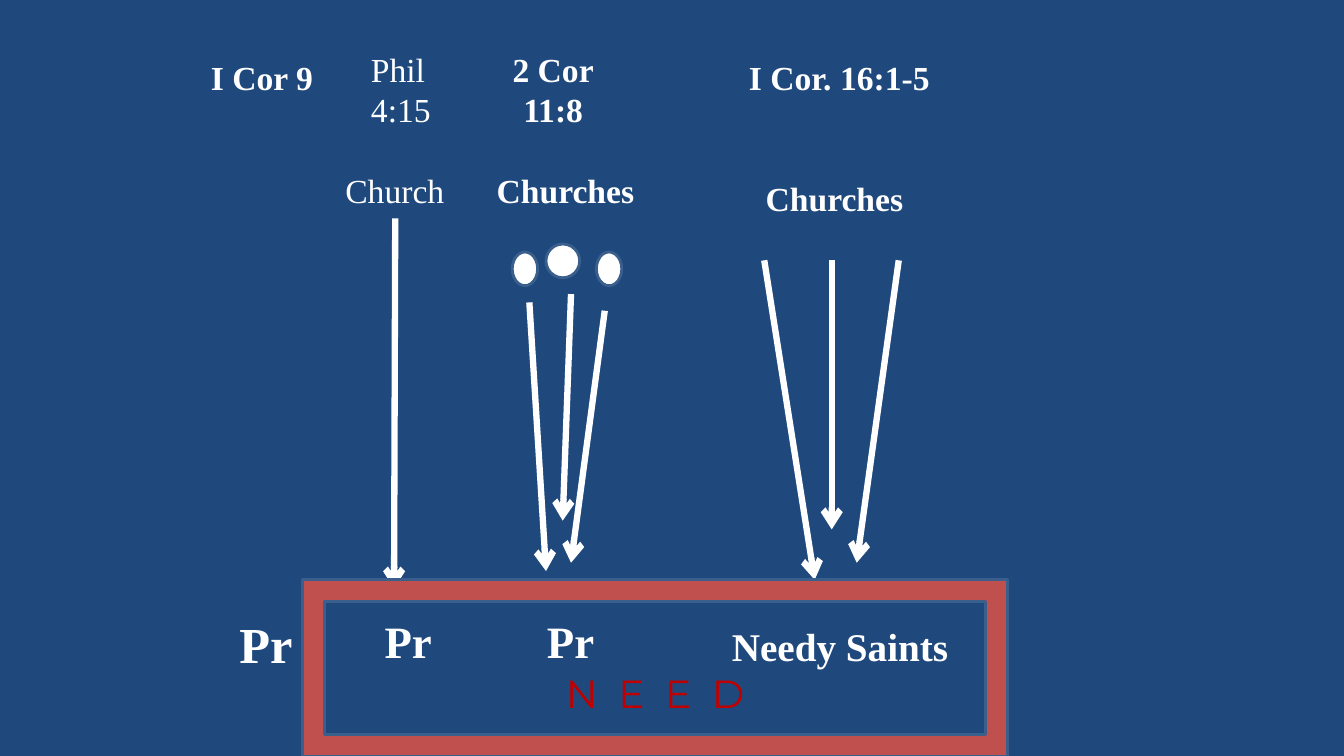
from lxml import etree
from pptx import Presentation
from pptx.dml.color import RGBColor
from pptx.enum.shapes import MSO_CONNECTOR, MSO_SHAPE
from pptx.enum.text import MSO_ANCHOR, PP_ALIGN
from pptx.oxml.ns import qn
from pptx.util import Cm, Pt

NAVY = RGBColor(0x1F, 0x49, 0x7D)
WHITE = RGBColor(0xFF, 0xFF, 0xFF)
EDGE = RGBColor(0x3A, 0x5F, 0x8C)
BRICK = RGBColor(0xC0, 0x50, 0x4D)
RED = RGBColor(0xC0, 0x00, 0x00)
LEFT, MID = PP_ALIGN.LEFT, PP_ALIGN.CENTER
OVAL, FRAME = MSO_SHAPE.OVAL, MSO_SHAPE.FRAME
STRAIGHT = MSO_CONNECTOR.STRAIGHT
MIDDLE = MSO_ANCHOR.MIDDLE

deck = Presentation()
deck.slide_width, deck.slide_height = Cm(33.87), Cm(19.05)
slide = deck.slides.add_slide(deck.slide_layouts[6])
slide.background.fill.solid()
slide.background.fill.fore_color.rgb = NAVY
shapes = slide.shapes


def label(text, x, y, size=24, bold=True, wide=4, align=MID):
    """Write text in a box centred on x, y."""
    high = 1.4 * (text.count("\n") + 1)
    box = shapes.add_textbox(Cm(x - wide / 2), Cm(y - high / 2), Cm(wide), Cm(high))
    frame = box.text_frame
    frame.word_wrap = True
    frame.vertical_anchor = MIDDLE
    frame.margin_left = frame.margin_right = 0
    frame.margin_top = frame.margin_bottom = 0
    frame.text = text
    for para in frame.paragraphs:
        para.alignment = align
        para.font.name = "Times New Roman"
        para.font.size = Pt(size)
        para.font.bold = bold
        para.font.color.rgb = WHITE


def shape(kind, x, y, wide, high, fill):
    item = shapes.add_shape(kind, Cm(x), Cm(y), Cm(wide), Cm(high))
    item.shadow.inherit = False
    item.fill.solid()
    item.fill.fore_color.rgb = fill
    item.line.color.rgb = EDGE
    item.line.width = Pt(2)
    return item


# Verses
label("I Cor 9", 6.6, 1.94)
label("Phil\n4:15", 10.35, 2.24, bold=False, wide=2, align=LEFT)
label("2 Cor\n11:8", 13.94, 2.24)
label("I Cor. 16:1-5", 21.15, 1.94, wide=6)

# Givers
label("Church", 9.95, 4.79, bold=False)
label("Churches", 14.25, 4.79)
label("Churches", 21.03, 4.99)

# Three churches
for x, y, wide in [(13.76, 6.15, 0.85), (12.91, 6.35, 0.64), (15.03, 6.35, 0.64)]:
    shape(OVAL, x, y, wide, 0.85, WHITE)

# Arrows of support
for x1, y1, x2, y2 in [
    (9.96, 5.5, 9.93, 14.83),
    (13.34, 7.62, 13.76, 14.39),
    (14.39, 7.41, 14.18, 13.12),
    (15.24, 7.83, 14.39, 14.18),
    (19.26, 6.56, 20.53, 14.61),
    (20.96, 6.56, 20.96, 13.34),
    (22.65, 6.56, 21.59, 14.18),
]:
    arrow = shapes.add_connector(STRAIGHT, Cm(x1), Cm(y1), Cm(x2), Cm(y2))
    arrow.line.color.rgb = WHITE
    arrow.line.width = Pt(4.5)
    etree.SubElement(arrow.line._get_or_add_ln(), qn("a:tailEnd"), type="arrow")
    etree.SubElement(arrow._element.spPr, qn("a:effectLst"))

# Frame of need
need = shape(FRAME, 7.62, 14.61, 17.78, 4.45, BRICK)
body = need.text_frame
body.vertical_anchor = MIDDLE
body.margin_top = Cm(1.35)
para = body.paragraphs[0]
para.alignment = MID
run = para.add_run()
run.text = "N E E D"
run.font.name = "Montserrat"
run.font.size = Pt(28)
run.font.color.rgb = RED
run.font._element.set("spc", "370")

# Receivers
label("Pr", 6.7, 16.2, size=36, wide=2)
for x in (10.29, 14.38):
    label("Pr", x, 16.15, size=32, wide=2)
label("Needy Saints", 21.17, 16.28, size=28, wide=6)

deck.save("out.pptx")
